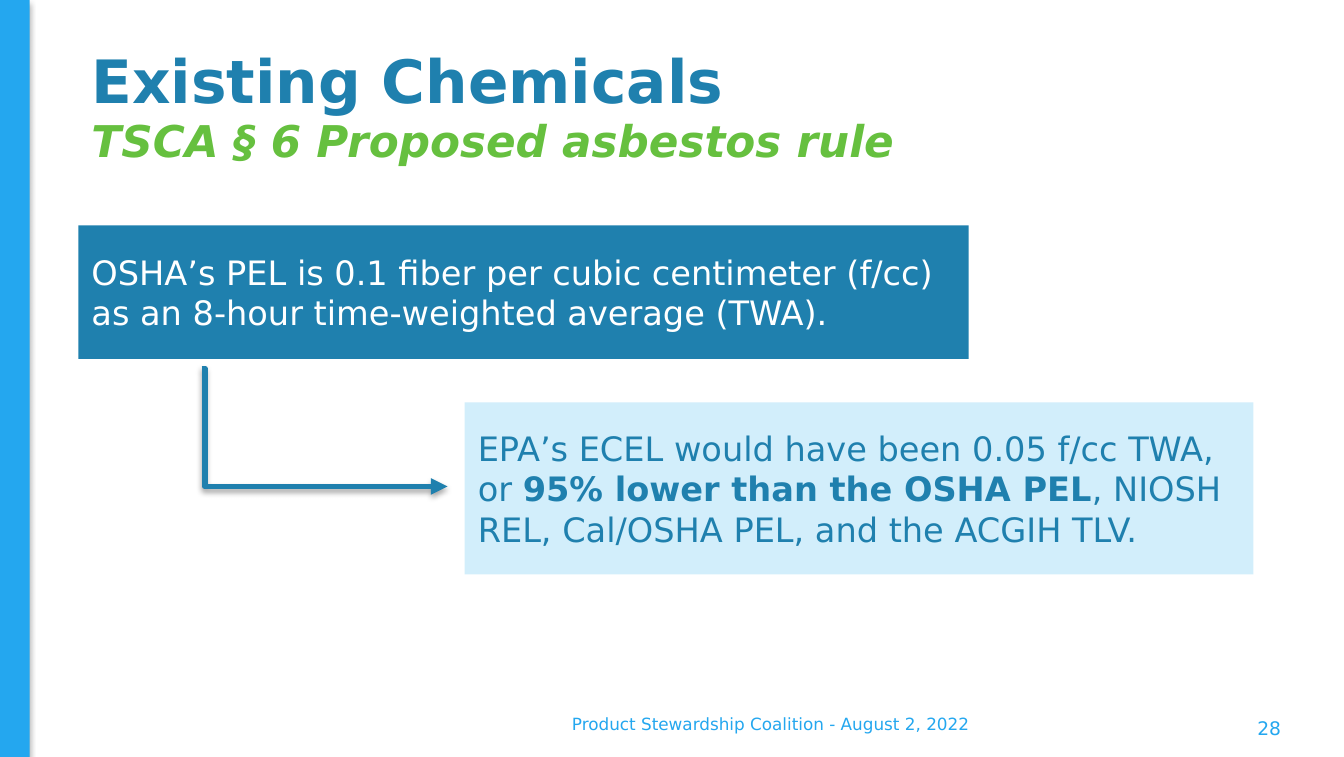
from lxml import etree
from pptx import Presentation, util as u
from pptx.dml.color import RGBColor
from pptx.enum import shapes, text
from pptx.oxml import ns

SKY, BLUE, GREEN, PALE, WHITE = "24A7EF", "1F80AE", "66C03F", "D2EEFB", "FFFFFF"
LEFT, MID, RIGHT = text.PP_ALIGN.LEFT, text.PP_ALIGN.CENTER, text.PP_ALIGN.RIGHT


def color(code):
    return RGBColor.from_string(code)


def shade(item):
    """Add a soft drop shadow below the item."""
    fx = etree.SubElement(item._element.spPr, ns.qn("a:effectLst"))
    drop = etree.SubElement(fx, ns.qn("a:outerShdw"), blurRad=str(u.Pt(3.1)),
                            dist=str(u.Pt(1.8)), dir="5400000", rotWithShape="0")
    tint = etree.SubElement(drop, ns.qn("a:srgbClr"), val="000000")
    etree.SubElement(tint, ns.qn("a:alpha"), val="35000")


deck = Presentation()
deck.slide_width, deck.slide_height = u.Cm(25.4), u.Cm(14.3)
slide = deck.slides.add_slide(deck.slide_layouts[6])
parts = slide.shapes

# Side bar
bar = parts.add_shape(shapes.MSO_SHAPE.RECTANGLE, 0, 0, u.Cm(0.56), deck.slide_height)
bar.fill.solid()
bar.fill.fore_color.rgb = color(SKY)
bar.line.fill.background()
shade(bar)

# Text blocks: place, fill, ink, align, line spacing, font, runs (text, bold)
blocks = [
    ((1.48, 0.51, 22.76, 2.16), None, BLUE, LEFT, 0.9, {"size": u.Pt(32)},
     [("Existing Chemicals", True)]),
    ((5.9, 13.29, 17.32, 0.76), None, SKY, MID, 1.0, {"size": u.Pt(9)},
     [("Product Stewardship Coalition - August 2, 2022", False)]),
    ((21.89, 13.49, 2.57, 0.51), None, SKY, RIGHT, 1.0, {"size": u.Pt(10)},
     [("28", False)]),
    ((1.48, 2.02, 22.76, 1.37), None, GREEN, LEFT, 0.9,
     {"size": u.Pt(23.4), "italic": True},
     [("TSCA § 6 Proposed asbestos rule", True)]),
    ((1.48, 4.26, 16.83, 2.52), BLUE, WHITE, LEFT, 1.0, {"size": u.Pt(18)},
     [("OSHA’s PEL is 0.1 fiber per cubic centimeter (f/cc) "
       "as an 8-hour time-weighted average (TWA).", False)]),
    ((8.78, 7.6, 14.91, 3.25), PALE, BLUE, LEFT, 1.0, {"size": u.Pt(18)},
     [("EPA’s ECEL would have been 0.05 f/cc TWA, or ", False),
      ("95% lower than the OSHA PEL", True),
      (", NIOSH REL, Cal/OSHA PEL, and the ACGIH TLV.", False)]),
]
for place, fill, ink, align, gap, look, runs in blocks:
    area = [u.Cm(n) for n in place]
    if fill:
        box = parts.add_shape(shapes.MSO_SHAPE.RECTANGLE, *area)
        box.shadow.inherit = False
        box.fill.solid()
        box.fill.fore_color.rgb = color(fill)
        box.line.fill.background()
    else:
        box = parts.add_textbox(*area)
    frame = box.text_frame
    frame.word_wrap = True
    frame.vertical_anchor = text.MSO_ANCHOR.MIDDLE
    para = frame.paragraphs[0]
    para.alignment, para.line_spacing = align, gap
    for words, bold in runs:
        run = para.add_run()
        run.text = words
        run.font.color.rgb = color(ink)
        for key, val in {"name": "DejaVu Sans", "bold": bold, **look}.items():
            setattr(run.font, key, val)

# Bent arrow from the first box to the second
ends = [u.Cm(n) for n in (3.81, 6.96, 8.46, 9.19)]
arrow = parts.add_connector(shapes.MSO_CONNECTOR.ELBOW, *ends)
arrow.line.width = u.Pt(3)
arrow.line.color.rgb = color(BLUE)
etree.SubElement(arrow.line._get_or_add_ln(), ns.qn("a:tailEnd"), type="triangle")
bend = arrow._element.spPr.find(ns.qn("a:prstGeom")).find(ns.qn("a:avLst"))
etree.SubElement(bend, ns.qn("a:gd"), name="adj1", fmla="val 1300")
shade(arrow)

deck.save("out.pptx")
